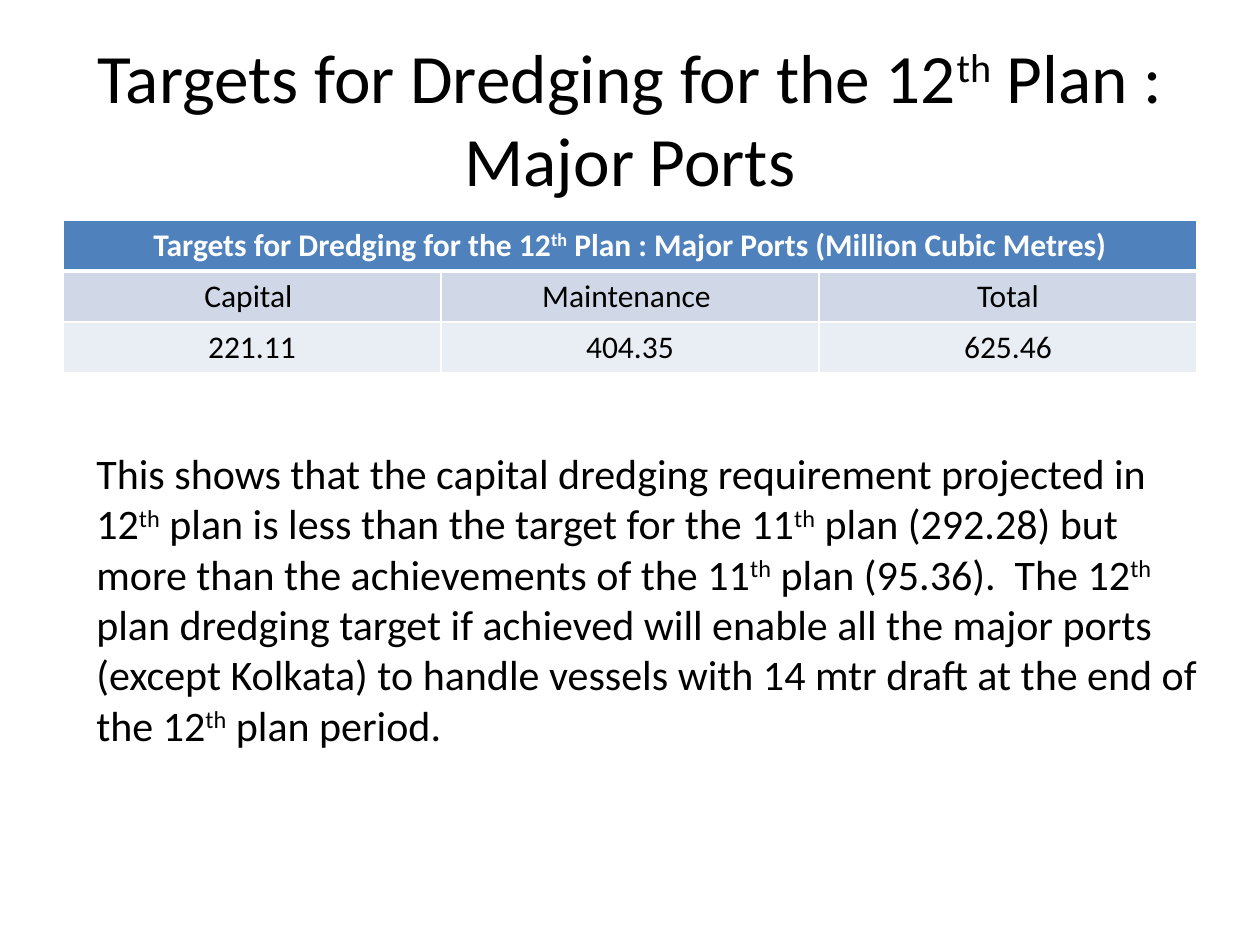
from lxml.etree import SubElement
from pptx import Presentation
from pptx.dml.color import RGBColor as RGB
from pptx.enum.text import MSO_ANCHOR as ANCHOR, PP_ALIGN as ALIGN
from pptx.oxml.ns import qn
from pptx.util import Pt

PX = 914400 / 126
COLORS = {"text": "000000", "white": "FFFFFF", "header": "4F81BD",
          "band1": "D0D8E8", "band2": "E9EDF4"}
TITLE = "Targets for Dredging for the 12^th^ Plan : Major Ports"
ROWS = [[TITLE + " (Million Cubic Metres)", "", ""],
        ["Capital ", "Maintenance ", "Total"],
        ["221.11", "404.35", "625.46"]]
BODY = ("This shows that the capital dredging requirement projected in 12^th^ plan "
        "is less than the target for the 11^th^ plan (292.28) but more than the "
        "achievements of the 11^th^ plan (95.36).  The 12^th^ plan dredging target "
        "if achieved will enable all the major ports (except Kolkata) to handle "
        "vessels with 14 mtr draft at the end of the 12^th^ plan period.")


def px(n):
    return round(n * PX)


def write(tf, text, size=18, color="text", bold=False, align=ALIGN.LEFT):
    p = tf.paragraphs[0]
    p.alignment = align
    for i, part in enumerate(text.split("^")):
        r = p.add_run()
        r.text = part
        r.font.name = "Calibri"
        r.font.size = Pt(size)
        r.font.bold = bold
        r.font.color.rgb = RGB.from_string(COLORS[color])
        if i % 2:
            r.font._element.set("baseline", "30000")


class Deck:
    def __init__(self, width, height):
        self.prs = Presentation()
        self.prs.slide_width, self.prs.slide_height = px(width), px(height)
        self.slide = self.prs.slides.add_slide(self.prs.slide_layouts[6])

    def text(self, box, text, anchor=ANCHOR.TOP, **fmt):
        tf = self.slide.shapes.add_textbox(*map(px, box)).text_frame
        tf.word_wrap = True
        tf.vertical_anchor = anchor
        write(tf, text, **fmt)

    def border(self, cell, side, width):
        ln = SubElement(cell._tc.get_or_add_tcPr(), qn(f"a:ln{side}"), w=str(Pt(width)))
        fill = SubElement(ln, qn("a:solidFill"))
        SubElement(fill, qn("a:srgbClr"), val=COLORS["white"])

    def table(self, box, rows, fills):
        table = self.slide.shapes.add_table(len(rows), len(rows[0]), *map(px, box)).table
        table.cell(0, 0).merge(table.cell(0, len(rows[0]) - 1))
        for i, row in enumerate(rows):
            header = i == 0
            widths = {"L": 1, "R": 1, "T": 3 if i == 1 else 1, "B": 3 if header else 1}
            for j, text in enumerate(row):
                cell = table.cell(i, j)
                for side, width in widths.items():
                    self.border(cell, side, width)
                cell.fill.solid()
                cell.fill.fore_color.rgb = RGB.from_string(COLORS[fills[i]])
                if text:
                    write(cell.text_frame, text, bold=header, align=ALIGN.CENTER,
                          color="white" if header else "text")


def main():
    deck = Deck(1260, 945)
    deck.text((63, 38, 1134, 158), TITLE, anchor=ANCHOR.MIDDLE, size=39.6, align=ALIGN.CENTER)
    deck.table((63, 220, 1134, 153), ROWS, ["header", "band1", "band2"])
    deck.text((84, 441, 1144, 369), BODY, size=24)
    deck.prs.save("out.pptx")


if __name__ == "__main__":
    main()
